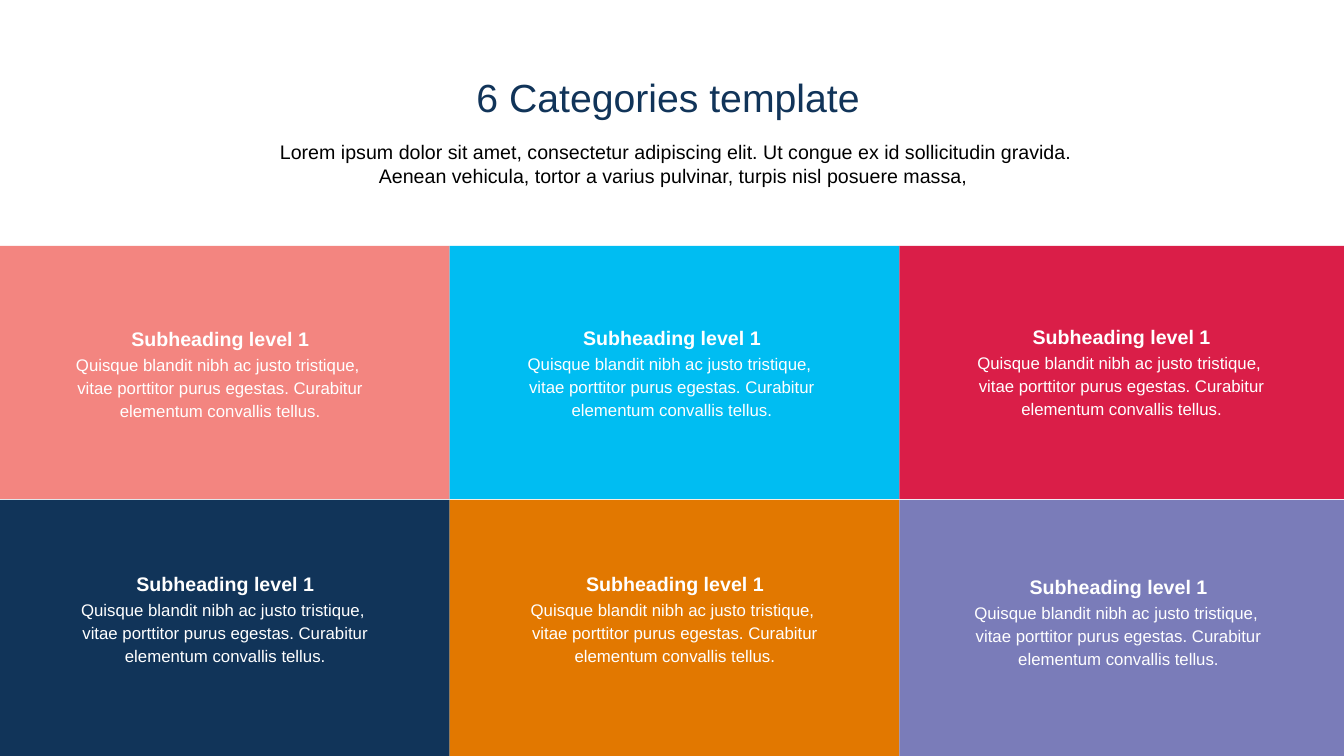
from pptx import Presentation
from pptx.dml.color import RGBColor
from pptx.enum.shapes import MSO_SHAPE
from pptx.enum.text import MSO_AUTO_SIZE, PP_ALIGN
from pptx.util import Inches, Pt

RECT = MSO_SHAPE.RECTANGLE
CENTER = PP_ALIGN.CENTER
GROW = MSO_AUTO_SIZE.SHAPE_TO_FIT_TEXT

WHITE = RGBColor(0xFF, 0xFF, 0xFF)
BLACK = RGBColor(0x00, 0x00, 0x00)
NAVY = RGBColor(0x11, 0x34, 0x59)
CORAL = RGBColor(0xF3, 0x85, 0x80)
SKY = RGBColor(0x00, 0xBD, 0xF2)
RED = RGBColor(0xDA, 0x1E, 0x48)
ORANGE = RGBColor(0xE2, 0x78, 0x00)
VIOLET = RGBColor(0x7A, 0x7C, 0xB9)

WIDE, HIGH = 13.33, 7.5
COL = 4.46
ROWS = [(2.44, 2.51), (4.96, 2.54)]  # top and height of each row

# Colour, then left and top of the text block, row by row
TILES = [
    (CORAL, 0.45, 3.16), (SKY, 4.93, 3.15), (RED, 9.39, 3.14),
    (NAVY, 0.5, 5.59), (ORANGE, 4.96, 5.59), (VIOLET, 9.36, 5.62),
]
BODY = [
    "Quisque blandit nibh ac justo tristique, ",
    "vitae porttitor purus egestas. Curabitur elementum convallis tellus.",
]

deck = Presentation()
deck.slide_width, deck.slide_height = Inches(WIDE), Inches(HIGH)
slide = deck.slides.add_slide(deck.slide_layouts[6])


def write(box, lines, size, color, bold=False, lead=1.14, before=0):
    """Add a centred text box whose lines are parted by line breaks."""
    frame = slide.shapes.add_textbox(*map(Inches, box)).text_frame
    frame.word_wrap = True
    frame.auto_size = GROW
    para = frame.paragraphs[0]
    para.alignment = CENTER
    para.line_spacing = lead
    para.space_before = Pt(before)
    for i, line in enumerate(lines):
        if i:
            para.add_line_break()
        run = para.add_run()
        run.text = line
        run.font.name = "Arial"
        run.font.size = Pt(size)
        run.font.bold = bold
        run.font.color.rgb = color


for i, (color, _, _) in enumerate(TILES):
    row, col = divmod(i, 3)
    top, high = ROWS[row]
    left = col * COL
    wide = min(COL, WIDE - left)
    tile = slide.shapes.add_shape(RECT, *map(Inches, (left, top, wide, high)))
    tile.shadow.inherit = False
    tile.fill.solid()
    tile.fill.fore_color.rgb = color
    tile.line.fill.background()

write((0.68, 0.61, 11.89, 0.64), ["6 Categories template"], 28, NAVY)
intro = ("Lorem ipsum dolor sit amet, consectetur adipiscing elit. "
         "Ut congue ex id sollicitudin gravida. Aenean vehicula, "
         "tortor a varius pulvinar, turpis nisl posuere massa, ")
write((2.56, 1.34, 8.29, 0.57), [intro], 14, BLACK, lead=1.0)

for _, left, top in TILES:
    write((left, top + 0.28, 3.47, 0.88), BODY, 12, WHITE, before=6)
    write((left + 0.61, top, 2.25, 0.35), ["Subheading level 1"], 14, WHITE, bold=True)

deck.save("out.pptx")
